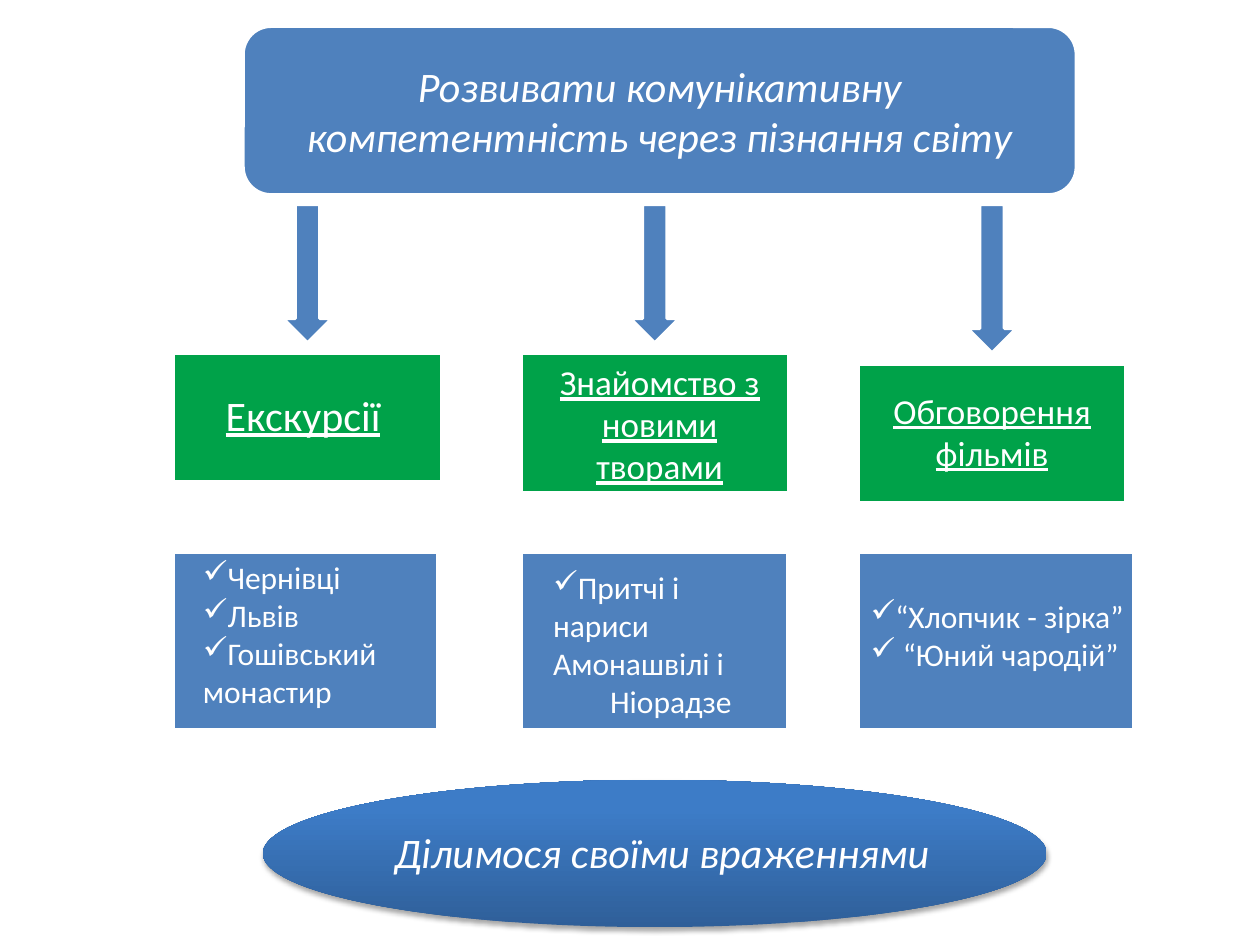
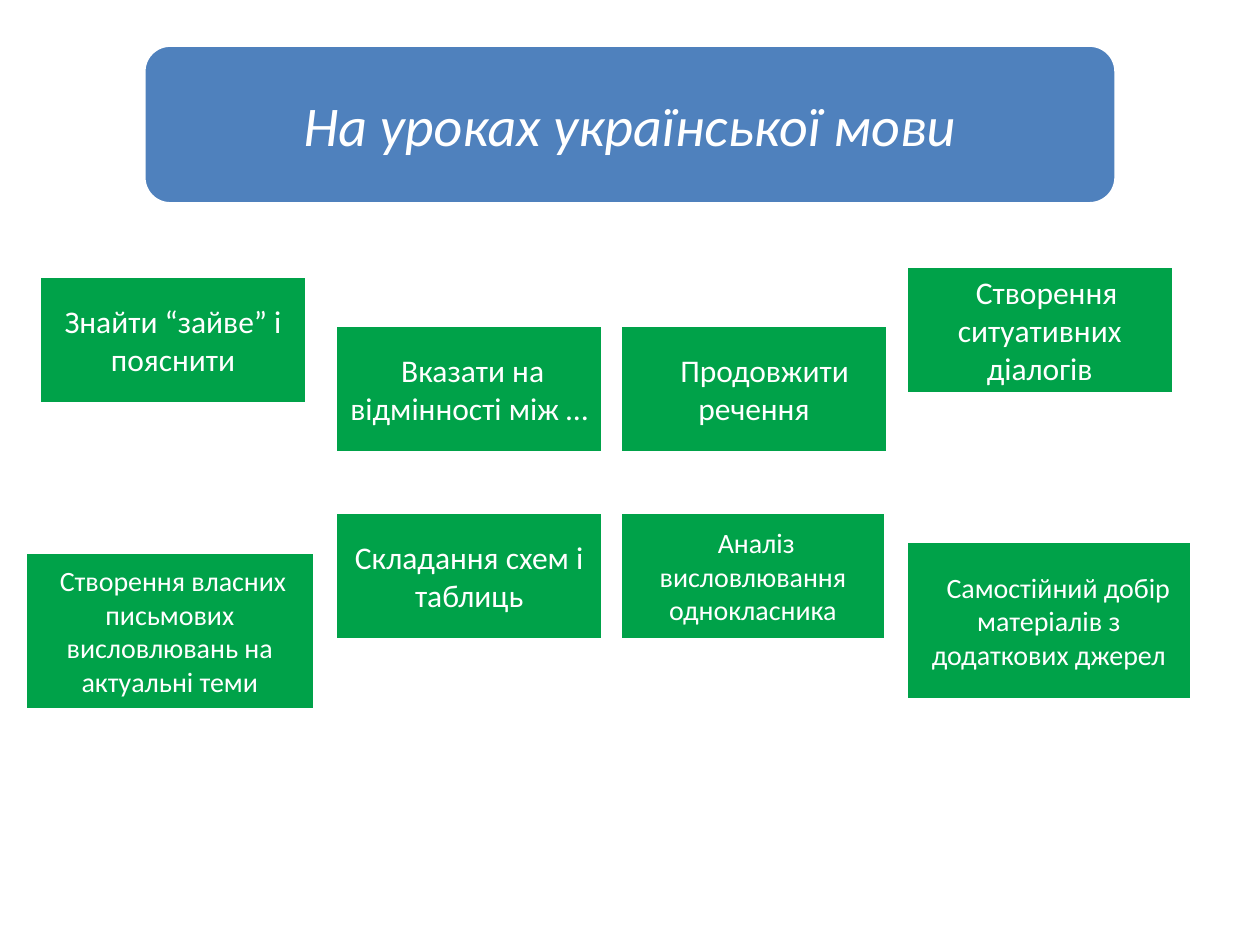
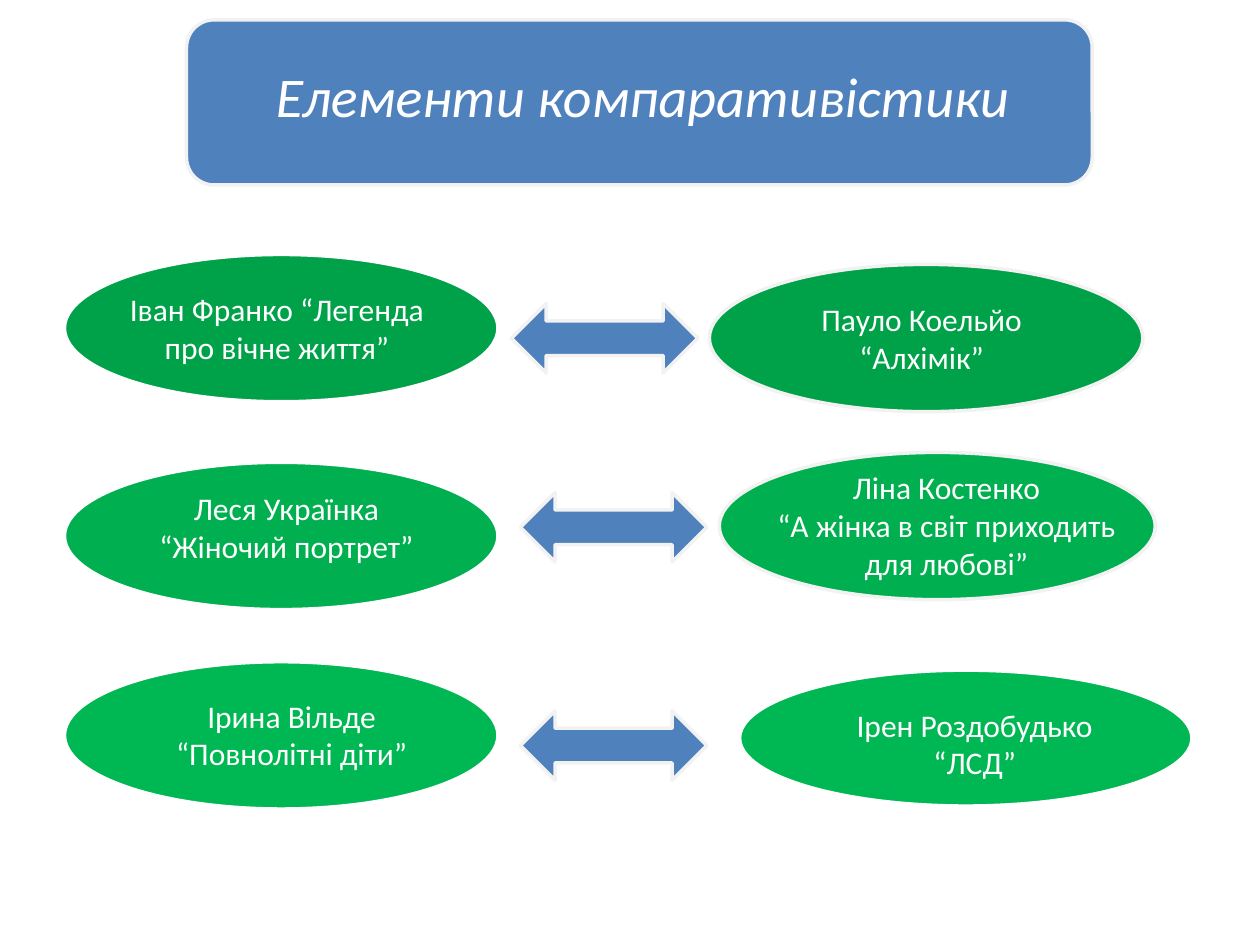
import pptx
import pptx.dml.color
import pptx.enum.shapes
import pptx.enum.text
import pptx.oxml
import pptx.oxml.ns
import pptx.util
from lxml import etree

Cm = pptx.util.Cm
Pt = pptx.util.Pt
RGBColor = pptx.dml.color.RGBColor
MSO_SHAPE = pptx.enum.shapes.MSO_SHAPE
PP_ALIGN = pptx.enum.text.PP_ALIGN
qn = pptx.oxml.ns.qn

FONT = "Calibri"
BLUE = RGBColor(0x4F, 0x81, 0xBD)
GREEN = RGBColor(0x00, 0xA2, 0x49)
MID_GREEN = RGBColor(0x00, 0xB0, 0x50)
LIGHT_GREEN = RGBColor(0x00, 0xB8, 0x53)
DEEP_BLUE = RGBColor(0x2F, 0x5F, 0x99)
BRIGHT_BLUE = RGBColor(0x3D, 0x7C, 0xC7)
WHITE = RGBColor(0xFF, 0xFF, 0xFF)
PALE = RGBColor(0xF2, 0xF2, 0xF2)


def write(tf, text, size=18, align=PP_ALIGN.CENTER, italic=False,
          underline=False, bullet=None, left=0, indent=0):
    """Add one formatted paragraph to a text frame."""
    p = tf.paragraphs[0] if not tf.paragraphs[0].runs else tf.add_paragraph()
    p.alignment = align
    pPr = p._p.get_or_add_pPr()
    pPr.set("marL", str(Cm(left)))
    pPr.set("indent", str(Cm(indent)))
    if bullet:
        etree.SubElement(pPr, qn("a:buChar")).set("char", bullet)
    r = p.add_run()
    r.text = text
    r.font.name = FONT
    r.font.size = Pt(size)
    r.font.italic = italic
    r.font.underline = underline
    r.font.color.rgb = WHITE


def add_shape(slide, kind, box, fill, line=WHITE):
    """Add a filled shape with a 2 pt outline and no shadow."""
    sp = slide.shapes.add_shape(kind, *map(Cm, box))
    sp.shadow.inherit = False
    sp.fill.solid()
    sp.fill.fore_color.rgb = fill
    sp.line.color.rgb = line
    sp.line.width = Pt(2)
    return sp


def add_text(slide, box, *lines, **fmt):
    """Add a wrapping text box with one paragraph per line."""
    tf = slide.shapes.add_textbox(*map(Cm, box)).text_frame
    tf.word_wrap = True
    for line in lines:
        write(tf, line, **fmt)
    return tf


def add_title(slide, box, text, size=32):
    """Add the rounded title band."""
    sp = add_shape(slide, MSO_SHAPE.ROUNDED_RECTANGLE, box, BLUE)
    write(sp.text_frame, text, size=size, italic=True)


def add_gradient_ellipse(slide, box):
    """Add a blue gradient ellipse with a soft shadow below it."""
    sp = add_shape(slide, MSO_SHAPE.OVAL, box, BRIGHT_BLUE)
    sp.line.fill.background()
    sp.fill.gradient()
    sp.fill.gradient_angle = 90
    for stop, position, color in zip(sp.fill.gradient_stops, (0, 0.8),
                                     (DEEP_BLUE, BRIGHT_BLUE)):
        stop.position = position
        stop.color.rgb = color
    effects = sp._element.spPr.find(qn("a:effectLst"))
    shadow = etree.SubElement(effects, qn("a:outerShdw"), blurRad=str(Pt(3.1)),
                              dist=str(Pt(1.8)), dir="5400000", rotWithShape="0")
    color = etree.SubElement(shadow, qn("a:srgbClr"), val="000000")
    etree.SubElement(color, qn("a:alpha"), val="35000")


def build_competence(slide):
    """Build the slide with three ways to develop competence."""
    columns = [
        (3.5, 7.13, 2.8, 2.58, 5.33, "Екскурсії", (4.3, 7.72, 4, 1.28),
         {"size": 24, "align": PP_ALIGN.LEFT}),
        (10.5, 7.13, 2.8, 2.8, 5.38, "Знайомство з новими творами",
         (10.7, 7.14, 5.2, 2.82), {"size": 20}),
        (17.3, 7.34, 3, 2.8, 5.56, "Обговорення фільмів",
         (17.7, 7.72, 4.6, 1.96), {"size": 20}),
    ]
    for left, top, arrow_h, head_h, list_w, head, text_box, fmt in columns:
        add_shape(slide, MSO_SHAPE.DOWN_ARROW, (left + 2.2, 4.12, 1, arrow_h), BLUE)
        add_shape(slide, MSO_SHAPE.RECTANGLE, (left, top, 5.4, head_h), GREEN)
        add_text(slide, text_box, head, underline=True, **fmt)
        add_shape(slide, MSO_SHAPE.RECTANGLE, (left, 11.13, list_w, 3.58), BLUE)

    item = {"align": PP_ALIGN.LEFT, "bullet": "✓"}
    add_text(slide, (3.84, 11.13, 5.13, 4.11),
             "Чернівці", "Львів", "Гошівський монастир", **item)
    tf = add_text(slide, (10.9, 11.33, 4.8, 3.33), "Притчі і нариси", **item)
    write(tf, "Амонашвілі і", align=PP_ALIGN.LEFT)
    write(tf, "Ніорадзе", align=PP_ALIGN.LEFT, left=1.15)
    tf = add_text(slide, (17.3, 11.92, 5.84, 1.81), "“Хлопчик - зірка”", **item)
    write(tf, "“Юний чародій”", left=0.65, indent=-0.65, **item)

    add_gradient_ellipse(slide, (5.3, 15.72, 15.8, 2.97))
    add_text(slide, (7.7, 16.54, 12.14, 1.28), "Ділимося своїми враженнями",
             size=24, align=PP_ALIGN.LEFT, italic=True)
    add_title(slide, (4.9, 0.53, 16.8, 3.4),
              "Розвивати комунікативну компетентність через пізнання світу", size=24)


def build_lessons(slide):
    """Build the slide with tasks for language lessons."""
    tasks = [
        ((0.79, 5.56, 5.4, 2.58), 18, 0, ["Знайти “зайве” і", "пояснити"]),
        ((6.76, 6.55, 5.4, 2.58), 18, 0.14, ["Вказати на", "відмінності між …"]),
        ((12.5, 6.55, 5.4, 2.58), 18, 0.43, ["Продовжити", "речення"]),
        ((0.5, 11.13, 5.85, 3.18), 16, 0.13,
         ["Створення власних", "письмових", "висловлювань на", "актуальні теми"]),
        ((6.76, 10.32, 5.4, 2.58), 18, 0, ["Складання схем і", "таблиць"]),
        ((18.26, 5.36, 5.4, 2.58), 18, 0.28, ["Створення", "ситуативних", "діалогів"]),
        ((12.5, 10.32, 5.36, 2.58), 16, 0.13,
         ["Аналіз", "висловлювання", "однокласника"]),
        ((18.26, 10.92, 5.77, 3.18), 16, 0.38,
         ["Самостійний добір", "матеріалів з", "додаткових джерел"]),
    ]
    for box, size, shift, (first, *rest) in tasks:
        tf = add_shape(slide, MSO_SHAPE.RECTANGLE, box, GREEN).text_frame
        write(tf, first, size=size, left=shift)
        for line in rest:
            write(tf, line, size=size)
    add_title(slide, (2.9, 0.91, 19.6, 3.2), "На уроках української мови")


def build_comparison(slide):
    """Build the slide that pairs works by different authors."""
    add_shape(slide, MSO_SHAPE.ROUNDED_RECTANGLE, (3.76, 0.4, 18.26, 3.33), BLUE, PALE)
    add_text(slide, (5.31, 1.12, 17.55, 1.63), "Елементи компаративістики",
             size=32, align=PP_ALIGN.LEFT, italic=True)
    pairs = [
        (GREEN, 5.13, (14.3, 5.33, 8.74, 2.97), PALE, (10.31, 6.12),
         (2.31, 5.72, 6.55, 1.8), ["Іван Франко “Легенда про вічне життя”"],
         (15.9, 5.92, 5.36, 1.8), ["Пауло Коельйо “Алхімік”"]),
        (MID_GREEN, 9.32, (14.5, 9.12, 8.79, 2.97), PALE, (10.49, 9.93),
         (2.31, 9.73, 6.93, 1.8), ["Леся Українка “Жіночий портрет”"],
         (14.71, 9.32, 8.74, 2.57),
         ["Ліна Костенко", "“А жінка в світ приходить", "для любові”"]),
        (LIGHT_GREEN, 13.34, (14.91, 13.51, 9.12, 2.74), WHITE, (10.49, 14.33),
         (3.1, 13.92, 5.56, 1.8), ["Ірина Вільде “Повнолітні діти”"],
         (16.87, 14.1, 5.56, 1.8), ["Ірен Роздобудько “ЛСД”"]),
    ]
    for (fill, top, right_box, right_line, arrow_at,
         left_text_box, left_lines, right_text_box, right_lines) in pairs:
        add_shape(slide, MSO_SHAPE.OVAL, (1.3, top, 8.74, 2.97), fill)
        add_shape(slide, MSO_SHAPE.OVAL, right_box, fill, right_line)
        add_shape(slide, MSO_SHAPE.LEFT_RIGHT_ARROW, (*arrow_at, 3.76, 1.4), BLUE, PALE)
        add_text(slide, left_text_box, *left_lines)
        add_text(slide, right_text_box, *right_lines)


def main():
    """Build and save the presentation."""
    prs = pptx.Presentation()
    prs.slide_width = Cm(25.4)
    prs.slide_height = Cm(19.05)
    for build in (build_competence, build_lessons, build_comparison):
        build(prs.slides.add_slide(prs.slide_layouts[6]))
    prs.save("out.pptx")


if __name__ == "__main__":
    main()
